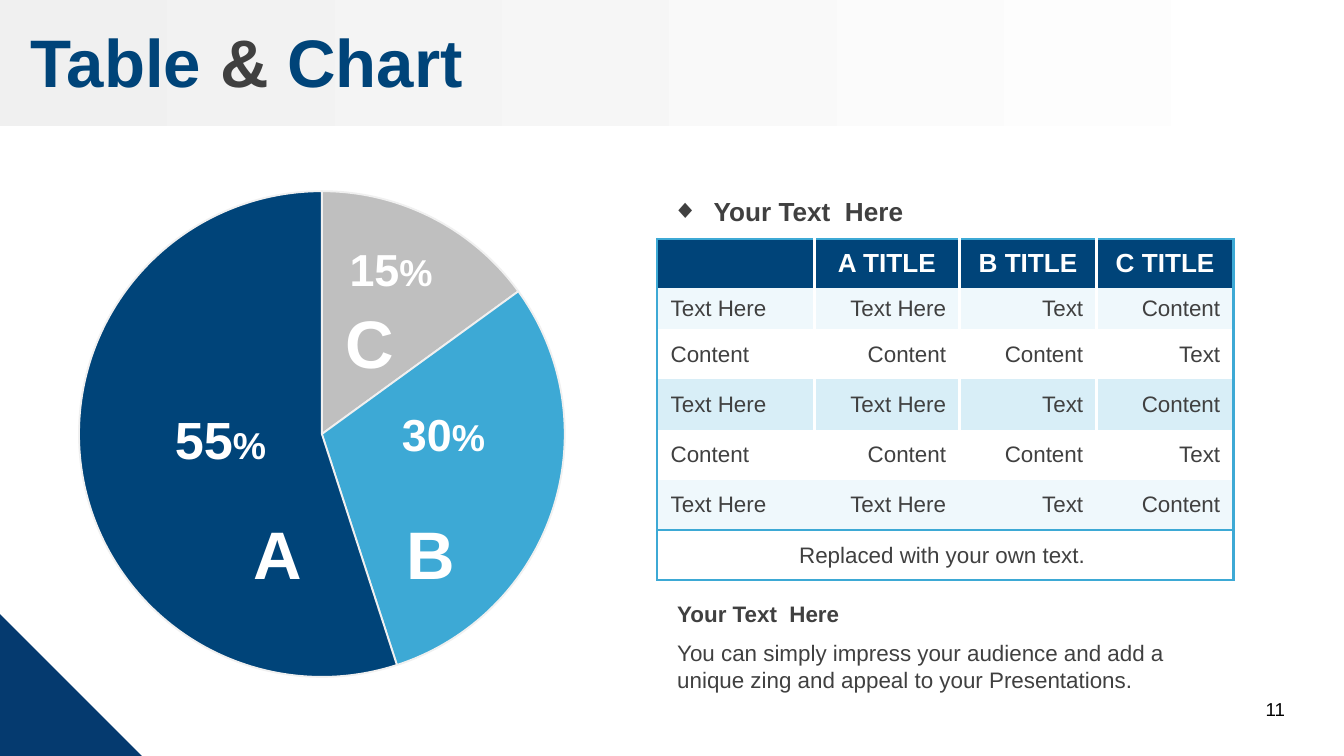
from lxml import etree
from pptx import Presentation
from pptx.chart.data import CategoryChartData
from pptx.dml.color import RGBColor
from pptx.enum.chart import XL_CHART_TYPE
from pptx.enum.shapes import MSO_SHAPE
from pptx.enum.text import MSO_ANCHOR, PP_ALIGN
from pptx.oxml import parse_xml
from pptx.oxml.ns import nsdecls, qn
from pptx.util import Inches, Pt

PIE = XL_CHART_TYPE.PIE
RECT, WEDGE = MSO_SHAPE.RECTANGLE, MSO_SHAPE.RIGHT_TRIANGLE
MID = MSO_ANCHOR.MIDDLE
LEFT, MIDDLE, RIGHT = PP_ALIGN.LEFT, PP_ALIGN.CENTER, PP_ALIGN.RIGHT

NAVY = RGBColor(0x00, 0x44, 0x79)
DEEP = RGBColor(0x05, 0x3A, 0x6F)
SKY = RGBColor(0x3D, 0xA9, 0xD5)
ICE = RGBColor(0xD8, 0xEE, 0xF7)
PALE = RGBColor(0xEF, 0xF8, 0xFC)
GREY = RGBColor(0xBF, 0xBF, 0xBF)
FOG = RGBColor(0xF0, 0xF0, 0xF0)
INK = RGBColor(0x40, 0x40, 0x40)
BLACK = RGBColor(0, 0, 0)
WHITE = RGBColor(0xFF, 0xFF, 0xFF)

deck = Presentation()
deck.slide_width, deck.slide_height = Inches(10), Inches(10) * 9 // 16
UNIT = deck.slide_width / 100
slide = deck.slides.add_slide(deck.slide_layouts[1])
shapes = slide.shapes


def grid(*cells):
    return [round(n * UNIT) for n in cells]


def style(para, size, color, bold=False, align=LEFT):
    para.alignment = align
    font = para.font
    font.name, font.size, font.bold = "Arial", Pt(size), bold
    font.color.rgb = color


band = shapes.add_shape(RECT, *grid(0, 0, 99.6, 9.4))
band.fill.gradient()
band.fill.gradient_angle = 0
for stop, color in zip(band.fill.gradient_stops, (FOG, WHITE)):
    stop.color.rgb = color
wedge = shapes.add_shape(WEDGE, *grid(-0.1, 45.6, 10.7, 10.7))
wedge.fill.solid()
wedge.fill.fore_color.rgb = DEEP
for place, shape in enumerate((band, wedge), 2):
    shape.line.fill.background()
    shape.shadow.inherit = False
    shapes.element.insert(place, shape.element)

title = shapes.title
title.left, title.top, title.width, title.height = grid(0, 0.3, 100, 8.5)
frame = title.text_frame
frame.margin_left = Inches(0.23)
frame.vertical_anchor = MID
para = frame.paragraphs[0]
style(para, 36, NAVY, True)
for word, color in (("Table ", NAVY), ("& ", INK), ("Chart", NAVY)):
    run = para.add_run()
    run.text = word
    run.font.color.rgb = color

data = CategoryChartData()
data.categories = ["1", "2", "3"]
data.add_series("Series 1", (15, 30, 55))
chart = shapes.add_chart(PIE, *grid(4.5, 12.8, 38.9, 39), data).chart
chart.has_legend = chart.has_title = False
chart.font.name, chart.font.size = "Arial", Pt(18)
chart.font.color.rgb = BLACK
plot = chart.plots[0]
plot.vary_by_categories = True
for i, color in enumerate((GREY, SKY, NAVY)):
    slice_ = plot.series[0].points[i].format
    slice_.fill.solid()
    slice_.fill.fore_color.rgb = color
    slice_.line.color.rgb = FOG
    slice_.line.width = Pt(1)

ODD = ["Text Here", "Text Here", "Text", "Content"]
EVEN = ["Content", "Content", "Content", "Text"]
ROWS = [["", "A TITLE", "B TITLE", "C TITLE"], ODD, EVEN, ODD, EVEN, ODD,
        ["Replaced with your own text. ", "", "", ""]]
FILLS = [NAVY, PALE, None, ICE, WHITE, PALE, None]
table = shapes.add_table(7, 4, *grid(48.9, 17.8, 42.9, 25.4)).table
table._tbl.tblPr.find(qn("a:tableStyleId")).text = \
    "{2D5ABB26-0587-4C30-8999-92F81FD0307C}"
table.horz_banding = False
for col, size in zip(table.columns, grid(11.7, 10.8, 10.2, 10.2)):
    col.width = size
for row, size in zip(table.rows, grid(3.6, 3.1, *[3.74] * 5)):
    row.height = size
table.cell(6, 0).merge(table.cell(6, 3))
for r, texts in enumerate(ROWS):
    for c, text in enumerate(texts):
        cell = table.cell(r, c)
        cell.vertical_anchor = MID
        para = cell.text_frame.paragraphs[0]
        para.text = text
        if r == 0:
            style(para, 14, WHITE, True, MIDDLE)
        else:
            style(para, 12, INK, False,
                  MIDDLE if r == 6 else RIGHT if c else LEFT)
        inner = (WHITE, 2.25) if r < 4 else None
        outer = (SKY, 1.5)
        edges = {"lnL": inner if c else outer,
                 "lnR": inner if c < 3 and r < 6 else outer,
                 "lnT": outer if r in (0, 6) else None,
                 "lnB": outer if r > 4 else None}
        props = cell._tc.get_or_add_tcPr()
        for tag, edge in edges.items():
            if edge:
                line = etree.SubElement(props, qn("a:" + tag),
                                        w=str(Pt(edge[1])))
                fill = etree.SubElement(line, qn("a:solidFill"))
                etree.SubElement(fill, qn("a:srgbClr"), val=str(edge[0]))
        if FILLS[r] is None:
            cell.fill.background()
        else:
            cell.fill.solid()
            cell.fill.fore_color.rgb = FILLS[r]

body = slide.placeholders[1]
body.left, body.top, body.width, body.height = grid(49, 14, 23.6, 3.4)
para = body.text_frame.paragraphs[0]
para.text = "Your Text  Here"
style(para, 14, INK, True)
para.space_before = Pt(0)
props = para._p.get_or_add_pPr()
props.set("marL", str(Inches(0.31)))
props.set("indent", str(-Inches(0.31)))
mark = parse_xml(f'<a:buChar {nsdecls("a")} char="◆"/>')
props.find(qn("a:defRPr")).addprevious(mark)

NOTES = [
    ((49.4, 47.1, 41.9, 5), "You can simply impress your audience and add a "
     "unique zing and appeal to your Presentations.", 12, INK, False, LEFT),
    ((49.4, 44.2, 41.9, 3), "Your Text  Here", 12, INK, True, LEFT),
    ((11.3, 29.8, 10.2, 5.7), "55%", 28, WHITE, True, MIDDLE),
    ((27.9, 29.8, 10.2, 5), "30%", 24, WHITE, True, MIDDLE),
    ((24, 17.5, 10.2, 5), "15%", 24, WHITE, True, MIDDLE),
    ((17.7, 37.6, 5.9, 7.1), "A", 36, WHITE, True, MIDDLE),
    ((29.1, 37.6, 5.9, 7.1), "B", 36, WHITE, True, MIDDLE),
    ((24.6, 21.9, 5.9, 7.1), "C", 36, WHITE, True, MIDDLE),
    ((73.3, 51.4, 23.3, 3), "11", 10, BLACK, False, RIGHT),
]
for cells, text, *look in NOTES:
    frame = shapes.add_textbox(*grid(*cells)).text_frame
    frame.word_wrap = True
    para = frame.paragraphs[0]
    para.text = text.rstrip("%")
    style(para, *look)
    if text.endswith("%"):
        run = para.add_run()
        run.text = "%"
        run.font.size = Pt(20)

deck.save("out.pptx")
